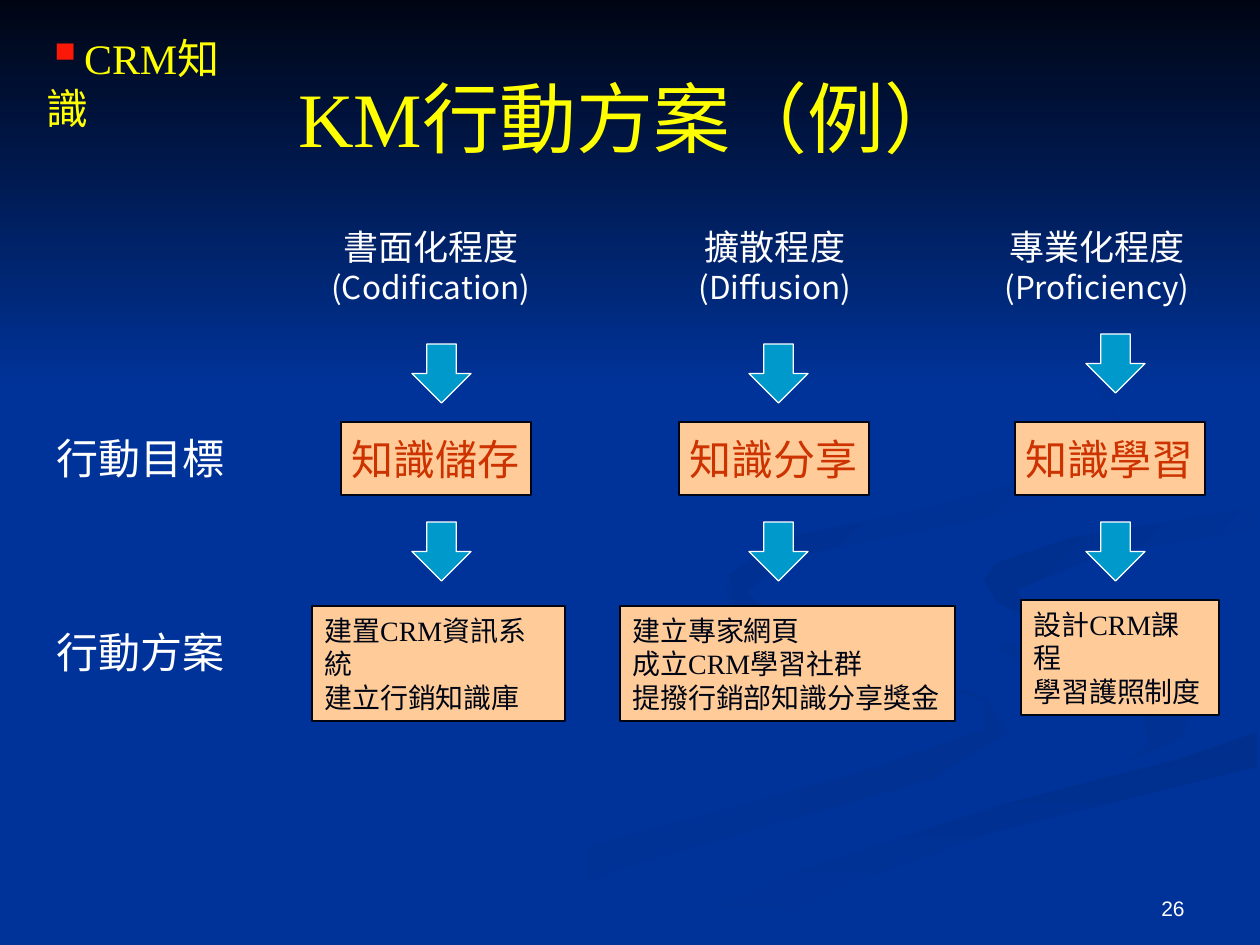
from lxml.etree import SubElement
from pptx import Presentation
from pptx.dml.color import RGBColor
from pptx.enum.shapes import MSO_SHAPE as SHAPE
from pptx.enum.text import MSO_ANCHOR as ANCHOR, PP_ALIGN as ALIGN
from pptx.oxml.ns import qn
from pptx.util import Emu, Pt

SCALE = 914400 / 126
SERIF, SANS, CJK = "Times New Roman", "Arial", "Noto Sans CJK SC"
BLUE = RGBColor(0x00, 0x33, 0x99)
NIGHT = RGBColor(0x00, 0x05, 0x14)
DEEP = RGBColor(0x00, 0x2F, 0x8D)
DIM = RGBColor(0x00, 0x31, 0x93)
WHITE = RGBColor(0xFF, 0xFF, 0xFF)
YELLOW = RGBColor(0xFF, 0xFF, 0x00)
PEACH = RGBColor(0xFF, 0xCC, 0x99)
RUST = RGBColor(0xCC, 0x33, 0x00)
CYAN = RGBColor(0x00, 0x99, 0xCC)

# Each swirl: start colour, end colour, clockwise angle, outline in px
SWIRLS = [
    (BLUE, DIM, 0, [
        (984, 697), (859, 654), (748, 611), (723, 581), (732, 610), (824, 646),
        (984, 700), (983, 730), (862, 772), (577, 849), (378, 944), (455, 944),
        (629, 866), (932, 779), (1008, 732)]),
    (BLUE, DIM, 45, [
        (1188, 718), (1119, 674), (975, 634), (912, 585), (931, 622),
        (1056, 675), (1143, 708), (1148, 747), (1126, 762), (1181, 738)]),
    (DEEP, BLUE, 90, [
        (634, 944), (719, 944), (844, 885), (989, 833), (1257, 767),
        (1257, 732), (1179, 759), (1004, 804), (794, 873)]),
    (DEEP, BLUE, 45, [
        (984, 580), (997, 602), (1041, 625), (1016, 590), (1106, 553),
        (1257, 529), (1257, 507), (1070, 538), (996, 563)]),
    (DEEP, BLUE, 45, [
        (861, 542), (1040, 507), (1120, 456), (1109, 387), (960, 294),
        (1086, 368), (1120, 422), (1085, 466), (924, 509), (788, 537),
        (728, 575), (736, 604), (784, 630), (747, 592), (786, 559)]),
]

# Each column: arrow top, heading left and width, heading,
# goal left, goal, plan box, plan
COLUMNS = [
    (344, 302, 258, ["書面化程度", "(Codification)"], 341, "知識儲存",
     (312, 606, 253, 115), ["建置CRM資訊系統", "建立行銷知識庫"]),
    (344, 653, 244, ["擴散程度", "(Diffusion)"], 679, "知識分享",
     (620, 606, 335, 115), ["建立專家網頁", "成立CRM學習社群", "提撥行銷部知識分享獎金"]),
    (334, 968, 258, ["專業化程度", "(Proficiency)"], 1015, "知識學習",
     (1021, 600, 198, 115), ["設計CRM課程", "學習護照制度"]),
]
FIRST, PITCH, ARROW, LOWER = 412, 337, 59, 522


def px(*nums):
    return [Emu(round(n * SCALE)) for n in nums]


def write(shape, lines, size, color, font=SERIF, align=ALIGN.LEFT,
          anchor=ANCHOR.MIDDLE, wrap=True):
    frame = shape.text_frame
    frame.text = "\n".join(lines)
    frame.word_wrap, frame.vertical_anchor = wrap, anchor
    for para in frame.paragraphs:
        para.alignment = align
        para.font.name, para.font.size = font, Pt(size)
        para.font.color.rgb = color
    return frame


def label(slide, box, lines, size, color, **style):
    return write(slide.shapes.add_textbox(*px(*box)), lines, size, color, **style)


def block(slide, kind, box, fill, edge, width):
    shape = slide.shapes.add_shape(kind, *px(*box))
    shape.shadow.inherit = False
    shape.fill.solid()
    shape.fill.fore_color.rgb = fill
    shape.line.color.rgb, shape.line.width = edge, Pt(width)
    return shape


def blend(shape, start, end, angle):
    """Fill without outline, as a gradient at a clockwise angle."""
    shape.shadow.inherit = False
    shape.line.fill.background()
    shape.fill.gradient()
    shape.fill.gradient_angle = -angle % 360
    for stop, color in zip(shape.fill.gradient_stops, (start, end)):
        stop.color.rgb = color


def backdrop(slide):
    slide.background.fill.solid()
    slide.background.fill.fore_color.rgb = BLUE
    for start, end, angle, points in SWIRLS:
        pen = slide.shapes.build_freeform(*points[0], scale=SCALE)
        pen.add_line_segments(points[1:])
        blend(pen.convert_to_shape(), start, end, angle)
    sky = slide.shapes.add_shape(SHAPE.RECTANGLE, *px(0, 0, 1260, 388))
    blend(sky, NIGHT, BLUE, 90)


def heading(slide, box):
    title = slide.shapes.title
    title.left, title.top, title.width, title.height = px(*box)
    write(title, ["KM行動方案（例）"], 44, YELLOW, align=ALIGN.CENTER)
    slide.shapes._spTree.append(title._element)  # in front of the backdrop


def topic(slide, box):
    frame = label(slide, box, ["CRM知識"], 24, YELLOW, anchor=ANCHOR.TOP)
    props = frame.paragraphs[0]._p.get_or_add_pPr()
    tint = SubElement(props, qn("a:buClr"))
    SubElement(tint, qn("a:srgbClr"), val="FB1807")
    SubElement(props, qn("a:buSzPct"), val="120000")
    SubElement(props, qn("a:buChar"), char="▪")
    props.append(props.find(qn("a:defRPr")))  # schema order: after the bullet


def column(slide, x, top, left, width, names, edge, goal, plan, steps):
    frame = label(slide, (left, 212, width, 107), names, 20, WHITE, font=CJK,
                  align=ALIGN.CENTER)
    frame.paragraphs[1].font.size = Pt(18)
    for y in (top, LOWER):
        block(slide, SHAPE.DOWN_ARROW, (x, y, ARROW, ARROW), CYAN, WHITE, 0.75)
    box = block(slide, SHAPE.RECTANGLE, (edge, 422, 190, 73), PEACH, NIGHT, 1.5)
    write(box, [goal], 24, RUST, align=ALIGN.CENTER, wrap=False)
    write(block(slide, SHAPE.RECTANGLE, plan, PEACH, NIGHT, 0.75), steps, 16, NIGHT)


def main():
    deck = Presentation()
    deck.slide_width, deck.slide_height = px(1260, 945)
    slide = deck.slides.add_slide(deck.slide_layouts[5])
    backdrop(slide)
    heading(slide, (63, 38, 1134, 157))
    topic(slide, (34, 26, 220, 63))
    for y, name in ((426, "行動目標"), (620, "行動方案")):
        label(slide, (44, y, 193, 63), [name], 24, WHITE, wrap=False)
    for i, parts in enumerate(COLUMNS):
        column(slide, FIRST + i * PITCH, *parts)
    label(slide, (903, 861, 294, 66), ["26"], 12, WHITE, font=SANS,
          align=ALIGN.RIGHT, anchor=ANCHOR.BOTTOM)
    deck.save("out.pptx")


if __name__ == "__main__":
    main()
